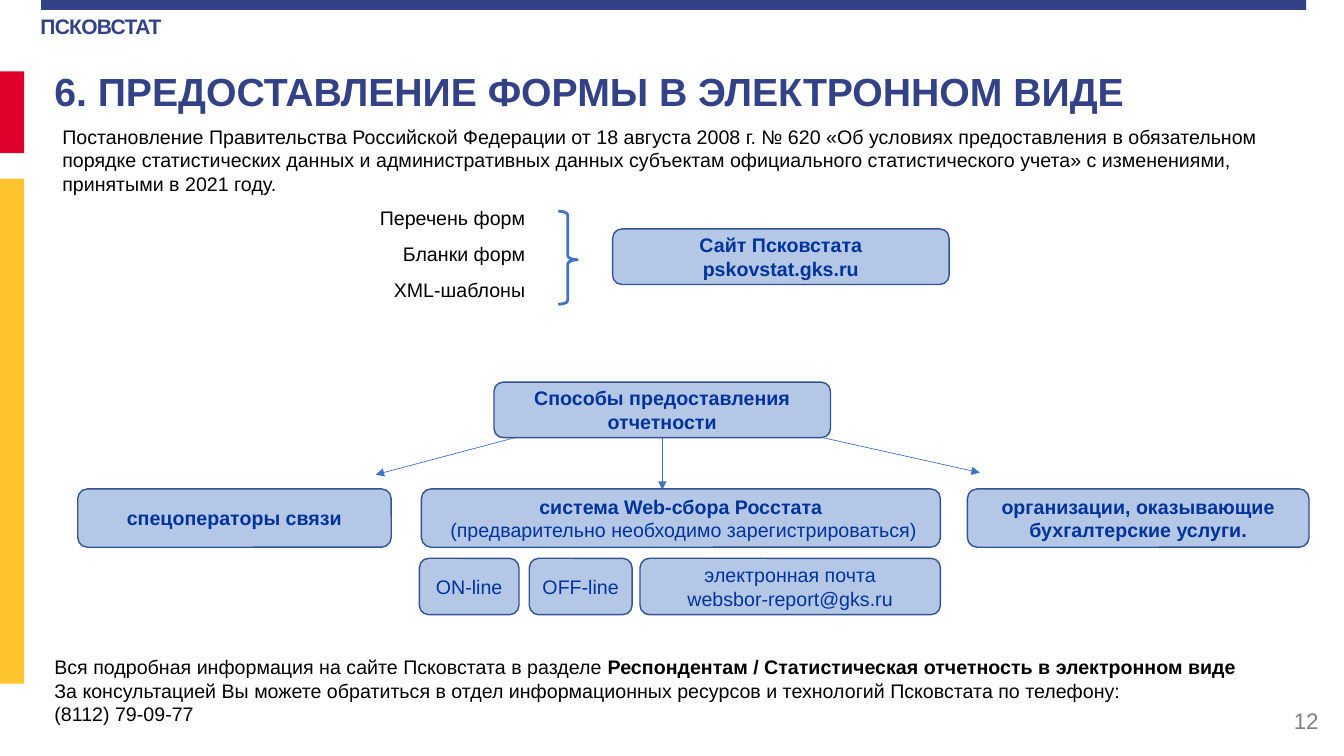
"""Builds the slide on filing statistical forms electronically."""
from dataclasses import dataclass

from lxml import etree
from pptx import Presentation
from pptx import util as u
from pptx.dml.color import RGBColor
from pptx.enum import shapes, text
from pptx.oxml import ns

LEFT, MID, RIGHT = text.PP_ALIGN.LEFT, text.PP_ALIGN.CENTER, text.PP_ALIGN.RIGHT


@dataclass(frozen=True)
class Theme:
    """Holds the font, colours and type sizes."""
    font: str = "Arial"
    navy: str = "334286"
    red: str = "E1002B"
    gold: str = "FFC32E"
    grey: str = "808080"
    black: str = "000000"
    ink: str = "003399"
    pale: str = "B4C7E7"
    edge: str = "325491"
    blue: str = "4472C4"
    body: int = 14
    head: int = 15
    page: int = 16
    title: int = 28


class Deck:
    """Draws styled elements on the current slide."""

    def __init__(self, theme):
        """Open a deck with one blank slide."""
        self.theme = theme
        self.prs = Presentation()
        self.prs.slide_width, self.prs.slide_height = u.Cm(33.87), u.Cm(19.05)
        self.slide = self.prs.slides.add_slide(self.prs.slide_layouts[6])

    def prose(self, frame, paras, size, color, align):
        """Fill a frame with paragraphs of (words, bold) runs."""
        frame.word_wrap = True
        for i, runs in enumerate(paras):
            para = frame.paragraphs[0] if i == 0 else frame.add_paragraph()
            para.alignment = align
            for words, bold in runs:
                for k, line in enumerate(words.split("\n")):
                    if k:
                        para.add_line_break()
                    run = para.add_run()
                    run.text = line
                    font = run.font
                    font.name, font.size, font.bold = self.theme.font, u.Pt(size), bold
                    font.color.rgb = RGBColor.from_string(color)

    def label(self, at, paras, size=None, color=None, align=LEFT, middle=False):
        """Add a text box and return its frame."""
        frame = self.slide.shapes.add_textbox(*map(u.Cm, at)).text_frame
        if middle:
            frame.vertical_anchor = text.MSO_ANCHOR.MIDDLE
        self.prose(frame, paras, size or self.theme.body, color or self.theme.black, align)
        return frame

    def shape(self, kind, at, fill=None, edge=None, width=1):
        """Add a preset shape with the given fill and outline."""
        item = self.slide.shapes.add_shape(kind, *map(u.Cm, at))
        item.shadow.inherit = False
        if fill:
            item.fill.solid()
            item.fill.fore_color.rgb = RGBColor.from_string(fill)
        else:
            item.fill.background()
        if edge:
            item.line.color.rgb = RGBColor.from_string(edge)
            item.line.width = u.Pt(width)
        else:
            item.line.fill.background()
        return item

    def bar(self, at, fill):
        """Add a plain colour bar."""
        self.shape(shapes.MSO_SHAPE.RECTANGLE, at, fill)

    def box(self, at, *paras):
        """Add a rounded box with centred text."""
        item = self.shape(shapes.MSO_SHAPE.ROUNDED_RECTANGLE, at, self.theme.pale, self.theme.edge)
        item.text_frame.vertical_anchor = text.MSO_ANCHOR.MIDDLE
        self.prose(item.text_frame, [[p] for p in paras], self.theme.body, self.theme.ink, MID)
        return item

    def brace(self, at, *adjust):
        """Add a right brace."""
        item = self.shape(shapes.MSO_SHAPE.RIGHT_BRACE, at, edge=self.theme.blue, width=2)
        for i, value in enumerate(adjust):
            item.adjustments[i] = value

    def arrow(self, ends, start=None):
        """Add a thin arrow, joined to the bottom of a start box if given."""
        item = self.slide.shapes.add_connector(shapes.MSO_CONNECTOR.STRAIGHT, *map(u.Cm, ends))
        if start is not None:
            item.begin_connect(start, 2)
        item.line.color.rgb = RGBColor.from_string(self.theme.blue)
        item.line.width = u.Pt(0.5)
        etree.SubElement(item.line._get_or_add_ln(), ns.qn("a:tailEnd"), type="triangle")
        etree.SubElement(item._element.spPr, ns.qn("a:effectLst"))


def main():
    """Build and save the slide."""
    look = Theme()
    deck = Deck(look)

    head = deck.label((1.02, 0.33, 3.9, 0.69), [[("ПСКОВСТАТ", True)]], look.head, look.navy)
    head.margin_left = head.margin_right = head.margin_top = head.margin_bottom = 0
    head.paragraphs[0].space_before = u.Pt(1)
    head.paragraphs[0].runs[0]._r.get_or_add_rPr().set("spc", "-50")
    deck.bar((1.04, 0, 31.88, 0.25), look.navy)
    deck.bar((0, 1.8, 0.61, 2.06), look.red)
    deck.bar((0, 4.5, 0.61, 12.73), look.gold)
    deck.label((25.86, 17.65, 7.62, 1.02), [[("12", False)]], look.page, look.grey, RIGHT, True)
    deck.label((1.12, 1.5, 29.06, 1.57), [[("6. ПРЕДОСТАВЛЕНИЕ ФОРМЫ В ЭЛЕКТРОННОМ ВИДЕ", True)]],
               look.title, look.navy, middle=True)
    deck.label((1.32, 3.02, 30.78, 2.06), [[(
        "Постановление Правительства Российской Федерации от 18 августа 2008 г. № 620 "
        "«Об условиях предоставления в обязательном порядке статистических данных и "
        "административных данных субъектам официального статистического учета» "
        "с изменениями, принятыми в 2021 году.", False)]])

    for i, name in enumerate(("Перечень форм", "Бланки форм", "XML-шаблоны")):
        deck.label((9.2, 5.06 + 0.91 * i, 4.29, 0.86), [[(name, False)]], align=RIGHT)
    deck.brace((14.07, 5.32, 0.48, 2.35), 0.207, 0.522)
    deck.box((15.44, 5.77, 8.48, 1.4), ("Сайт Псковстата", True), ("pskovstat.gks.ru", True))

    deck.arrow((14.25, 10.69, 9.47, 11.96))
    deck.arrow((20.02, 10.87, 24.69, 11.91))
    ways = deck.box((12.45, 9.63, 8.48, 1.4), ("Способы предоставления отчетности", True))
    deck.arrow((16.69, 11.03, 16.69, 12.34), ways)

    row, tall = 12.32, 1.47
    deck.box((1.96, row, 7.9, tall), ("спецоператоры связи", True))
    deck.box((10.62, row, 13.08, tall), ("система Web-сбора Росстата", True),
             (" (предварительно необходимо зарегистрироваться)", False))
    deck.box((24.38, row, 8.61, tall), ("организации, оказывающие бухгалтерские услуги.", True))

    row, tall = 14.07, 1.42
    deck.box((10.57, row, 2.51, tall), ("ON-line", False))
    deck.box((13.34, row, 2.59, tall), ("OFF-line", False))
    deck.box((16.13, row, 7.57, tall), ("электронная почта", False), ("websbor-report@gks.ru", False))

    deck.label((1.12, 16.38, 30.78, 2.06), [
        [("Вся подробная информация на сайте Псковстата в разделе ", False),
         ("Респондентам / Статистическая отчетность в электронном виде", True)],
        [("За консультацией Вы можете обратиться в отдел информационных ресурсов и технологий "
          "Псковстата по телефону:\n(8112) 79-09-77", False)]])

    deck.prs.save("out.pptx")


if __name__ == "__main__":
    main()
